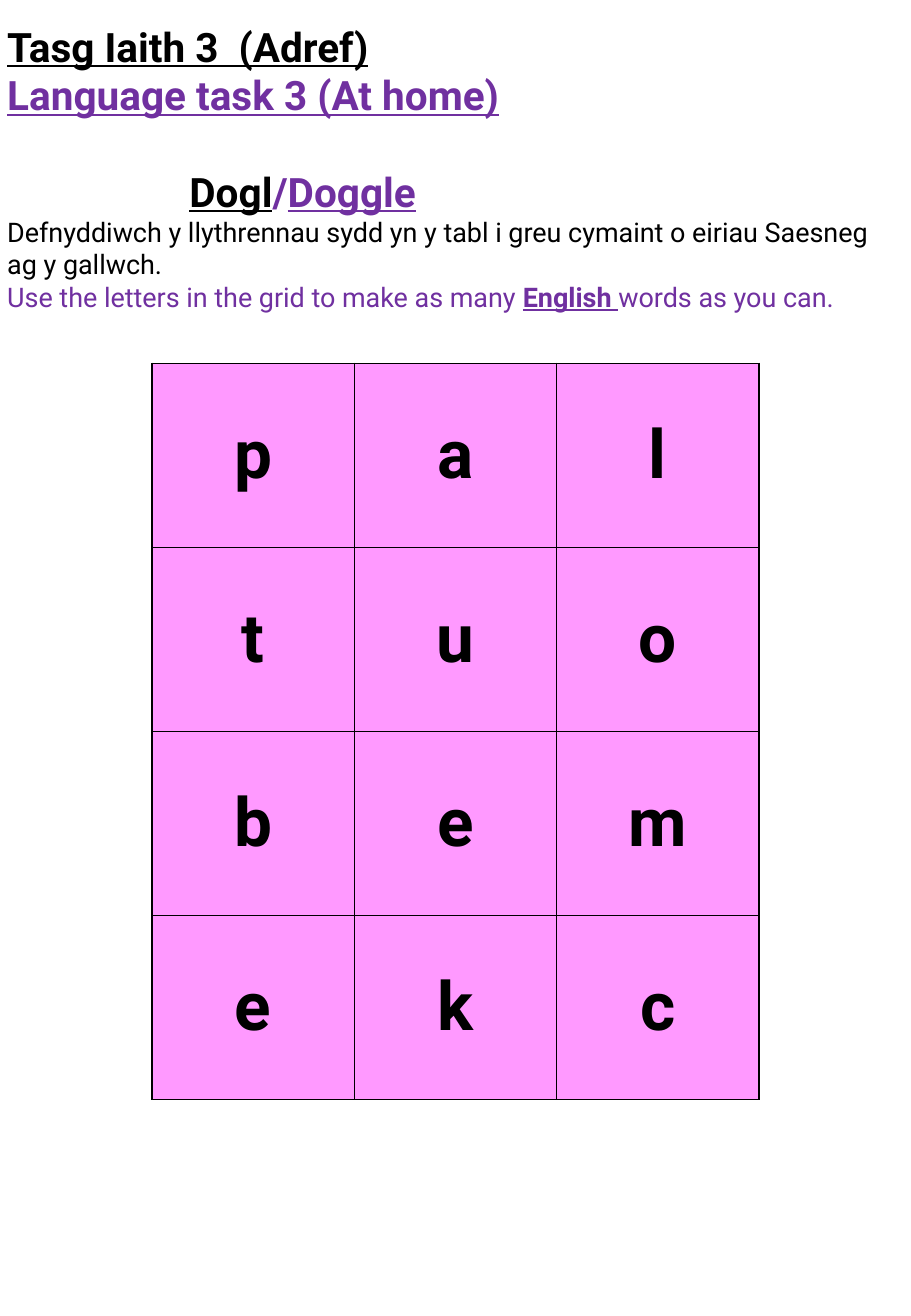
from dataclasses import dataclass

from lxml.etree import SubElement
from pptx import Presentation
from pptx.dml.color import RGBColor
from pptx.enum.text import MSO_ANCHOR, PP_ALIGN
from pptx.oxml.ns import qn
from pptx.util import Inches, Pt


@dataclass(frozen=True)
class Theme:
    font: str = "Roboto"
    welsh: str = "000000"
    english: str = "7030A0"
    tile: str = "FF99FF"
    border: str = "000000"
    heading_size: int = 24
    body_size: int = 16
    letter_size: int = 40
    border_width: int = 1


THEME = Theme()
WELSH, ENGLISH = THEME.welsh, THEME.english
HEADING, BODY = THEME.heading_size, THEME.body_size

# (size, left indent in inches, space before in points, runs of (text, colour, bold, underline))
INSTRUCTIONS = [
    (HEADING, 0, 0, [("Tasg Iaith 3  (Adref)", WELSH, True, True)]),
    (HEADING, 0, 0, [("Language task 3 (At home)", ENGLISH, True, True)]),
    (HEADING, 1.5, 28.5, [
        ("Dogl", WELSH, True, True),
        ("/", ENGLISH, True, False),
        ("Doggle", ENGLISH, True, True),
    ]),
    (BODY, 0, 0, [(
        "Defnyddiwch y llythrennau sydd yn y tabl i greu cymaint o eiriau Saesneg ag y gallwch.",
        WELSH, False, False,
    )]),
    (BODY, 0, 0, [
        ("Use the letters in the grid to make as many ", ENGLISH, False, False),
        ("English ", ENGLISH, True, True),
        ("words as you can.", ENGLISH, False, False),
    ]),
]
LETTERS = ["pal", "tuo", "bem", "ekc"]

SLIDE_WIDTH, SLIDE_HEIGHT = 7.5, 10.83
GRID_TOP, GRID_WIDTH, GRID_HEIGHT = 2.99, 5, 6.06


def add_run(paragraph, text, size, colour, bold, underline=False):
    run = paragraph.add_run()
    run.text = text
    font = run.font
    font.name = THEME.font
    font.size = Pt(size)
    font.bold = bold
    font.underline = underline
    font.color.rgb = RGBColor.from_string(colour)


def add_instructions(slide):
    box = slide.shapes.add_textbox(0, 0, Inches(7.33), Inches(2.75))
    frame = box.text_frame
    frame.word_wrap = True
    frame.vertical_anchor = MSO_ANCHOR.MIDDLE
    frame.margin_left = frame.margin_right = Inches(0.06)
    frame.margin_top = frame.margin_bottom = Inches(0.03)
    for index, (size, indent, space, runs) in enumerate(INSTRUCTIONS):
        paragraph = frame.add_paragraph() if index else frame.paragraphs[0]
        if indent:
            paragraph._p.get_or_add_pPr().set("marL", str(Inches(indent)))
        if space:
            paragraph.space_before = Pt(space)
        for text, colour, bold, underline in runs:
            add_run(paragraph, text, size, colour, bold, underline)


def add_borders(cell):
    properties = cell._tc.get_or_add_tcPr()
    for position, side in enumerate(("lnL", "lnR", "lnT", "lnB")):
        line = SubElement(properties, qn(f"a:{side}"), w=str(Pt(THEME.border_width)))
        fill = SubElement(line, qn("a:solidFill"))
        SubElement(fill, qn("a:srgbClr"), val=THEME.border)
        properties.insert(position, line)


def add_letter_grid(slide):
    row_count, column_count = len(LETTERS), len(LETTERS[0])
    left = (SLIDE_WIDTH - GRID_WIDTH) / 2
    table = slide.shapes.add_table(
        row_count, column_count,
        Inches(left), Inches(GRID_TOP), Inches(GRID_WIDTH), Inches(GRID_HEIGHT),
    ).table
    table.first_row = table.horz_banding = False
    for row, letters in enumerate(LETTERS):
        for column, letter in enumerate(letters):
            cell = table.cell(row, column)
            cell.fill.solid()
            cell.fill.fore_color.rgb = RGBColor.from_string(THEME.tile)
            cell.vertical_anchor = MSO_ANCHOR.MIDDLE
            add_borders(cell)
            paragraph = cell.text_frame.paragraphs[0]
            paragraph.alignment = PP_ALIGN.CENTER
            add_run(paragraph, letter, THEME.letter_size, WELSH, True)


def main():
    presentation = Presentation()
    presentation.slide_width = Inches(SLIDE_WIDTH)
    presentation.slide_height = Inches(SLIDE_HEIGHT)
    slide = presentation.slides.add_slide(presentation.slide_layouts[6])
    add_letter_grid(slide)
    add_instructions(slide)
    presentation.save("out.pptx")


if __name__ == "__main__":
    main()
